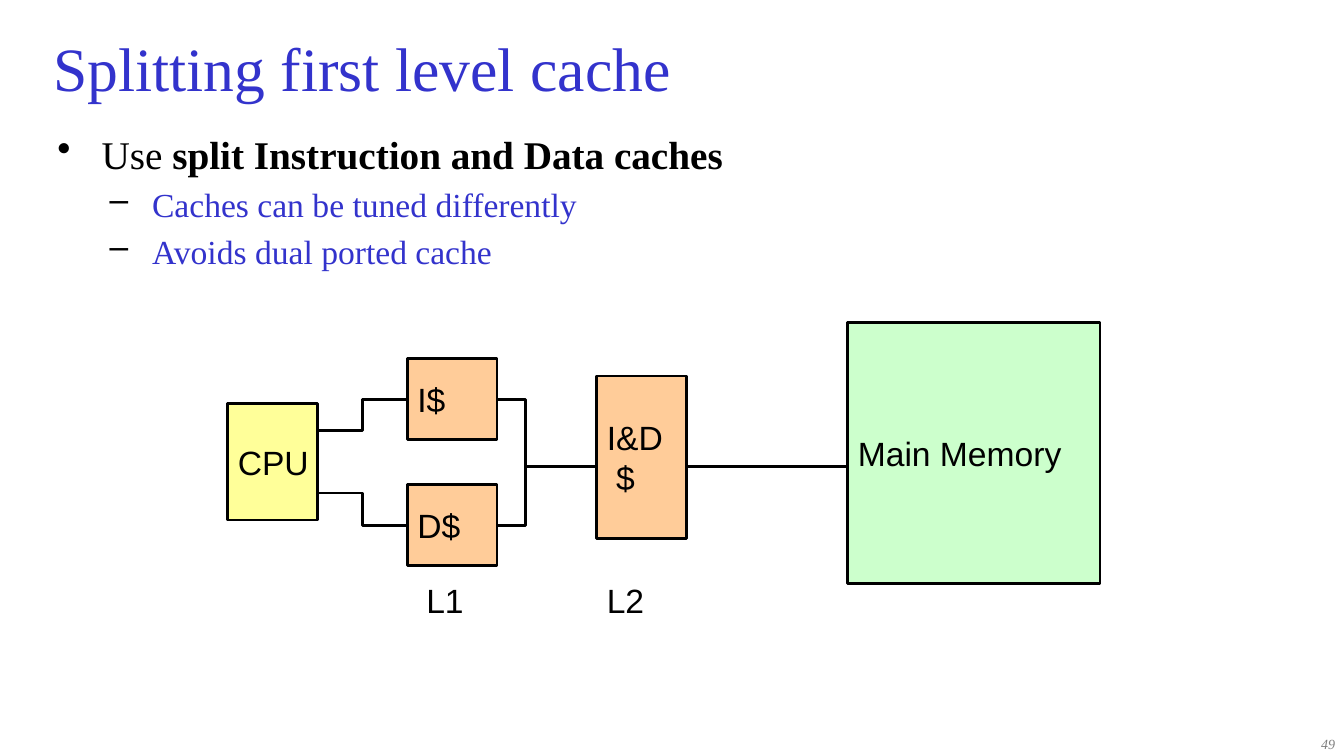
from pptx import Presentation, util as u
from pptx.dml import color
from pptx.enum import shapes, text
from pptx.oxml import ns
from lxml import etree

SCALE = 9144
SERIF, SANS = "Times New Roman", "Arial"
BLACK, BLUE, GREY = "000000", "3333CC", "7F7F7F"
LABEL = {"name": SANS, "size": u.Pt(24), "color": BLACK}


def px(*vals):
    """Turn lengths in px into EMU."""
    return [u.Emu(v * SCALE) for v in vals]


def rgb(code):
    """Make a colour from a hex string."""
    return color.RGBColor.from_string(code)


def put(obj, vals):
    """Set attributes from a dict."""
    for key, val in vals.items():
        setattr(obj, key, val)


def sub(node, tag, **attrs):
    """Append a DrawingML element."""
    return etree.SubElement(node, ns.qn("a:" + tag), attrs)


def write(para, words, font):
    """Add a run with the given font values."""
    run = para.add_run()
    run.text = words
    put(run.font, {k: v for k, v in font.items() if k != "color"})
    run.font.color.rgb = rgb(font["color"])


def inset(frame, side, top):
    """Set the inner margins of a text frame."""
    put(frame, dict(zip(("margin_left", "margin_right", "margin_top", "margin_bottom"),
                        px(side, side, top, top))))


def head(slide, box):
    """Place and format the title."""
    title = slide.shapes.title
    put(title, dict(zip(("left", "top", "width", "height"), px(*box))))
    frame = title.text_frame
    inset(frame, 10, 10)
    put(frame, {"vertical_anchor": text.MSO_ANCHOR.MIDDLE, "word_wrap": True,
                "auto_size": text.MSO_AUTO_SIZE.NONE})
    para = frame.paragraphs[0]
    para.alignment = text.PP_ALIGN.LEFT
    write(para, "Splitting first level cache", {"name": SERIF, "size": u.Pt(44), "color": BLUE})


def points(slide, box):
    """Place the bulleted list."""
    frame = slide.shapes.add_textbox(*px(*box)).text_frame
    frame.word_wrap = True
    inset(frame, 10, 10)
    main = {"name": SERIF, "size": u.Pt(28), "color": BLACK}
    minor = {"name": SERIF, "size": u.Pt(24), "color": BLUE}
    rows = [
        (0, [("Use ", main), ("split Instruction and Data caches", {**main, "bold": True})]),
        (1, [("Caches can be tuned differently", minor)]),
        (1, [("Avoids dual ported cache", minor)]),
    ]
    looks = [(50, -44, 5.6, "•"), (100, -42, 4.8, "–")]
    for i, (level, runs) in enumerate(rows):
        para = frame.add_paragraph() if i else frame.paragraphs[0]
        left, hang, gap, mark = looks[level]
        put(para, {"level": level, "space_before": u.Pt(gap)})
        props = para._p.get_or_add_pPr()
        props.set("marL", str(left * SCALE))
        props.set("indent", str(hang * SCALE))
        sub(sub(props, "buClr"), "srgbClr", val=BLACK)
        sub(props, "buChar", char=mark)
        for words, font in runs:
            write(para, words, font)


def block(slide, box, fill, *lines):
    """Draw one labelled part of the memory system."""
    shape = slide.shapes.add_shape(shapes.MSO_SHAPE.RECTANGLE, *px(*box))
    shape.shadow.inherit = False
    shape.fill.solid()
    shape.fill.fore_color.rgb = rgb(fill)
    shape.line.color.rgb = rgb(BLACK)
    shape.line.width = u.Pt(2)
    frame = shape.text_frame
    put(frame, {"word_wrap": False, "vertical_anchor": text.MSO_ANCHOR.MIDDLE})
    for i, words in enumerate(lines):
        para = frame.add_paragraph() if i else frame.paragraphs[0]
        para.alignment = text.PP_ALIGN.LEFT
        write(para, words, LABEL)


def wire(slide, ends, bend=None):
    """Draw a straight wire, or an elbow that turns at a share of its width."""
    kind = shapes.MSO_CONNECTOR.STRAIGHT if bend is None else shapes.MSO_CONNECTOR.ELBOW
    line = slide.shapes.add_connector(kind, *px(*ends))
    line.line.color.rgb = rgb(BLACK)
    line.line.width = u.Pt(2)
    props = line._element.spPr
    sub(props, "effectLst")
    if bend is not None:
        guides = props.find(ns.qn("a:prstGeom")).get_or_add_avLst()
        sub(guides, "gd", name="adj1", fmla=f"val {int(bend * 100000)}")


def note(slide, box, words):
    """Place the name of a cache level."""
    frame = slide.shapes.add_textbox(*px(*box)).text_frame
    put(frame, {"word_wrap": False, "auto_size": text.MSO_AUTO_SIZE.SHAPE_TO_FIT_TEXT})
    write(frame.paragraphs[0], words, LABEL)


def chart(slide, box):
    """Draw the cache diagram from the corner of its box."""
    x, y, wide, high = box
    side, cell = 89, 80
    first, second, store = x + 178, x + 366, x + 615
    upper, lower = y + 36, y + 161
    block(slide, (x, y + 80, side, 116), "FFFF99", "CPU")
    block(slide, (first, upper, side, cell), "FFCC99", "I$")
    block(slide, (first, lower, side, cell), "FFCC99", "D$")
    block(slide, (second, y + 53, side, 161), "FFCC99", "I&D", " $")
    block(slide, (store, y, wide - 615, high), "CCFFCC", "Main Memory")
    top, low = upper + cell // 2, lower + cell // 2
    wire(slide, (x + side, y + 169, first, low), 0.5)
    wire(slide, (x + side, y + 107, first, top), 0.5)
    out = first + side
    wire(slide, (out, top, out + 1, low), 29)
    mid = y + 143
    wire(slide, (out + 27, mid, second, mid))
    wire(slide, (second + side, mid, store, mid))
    for left, words in ((first + 9, "L1"), (second, "L2")):
        note(slide, (left, y + 250, 58, 50), words)


def foot(slide, box):
    """Place the page number."""
    frame = slide.shapes.add_textbox(*px(*box)).text_frame
    frame.word_wrap = True
    inset(frame, 10, 5)
    para = frame.paragraphs[0]
    para.alignment = text.PP_ALIGN.RIGHT
    write(para, "49", {"name": SERIF, "size": u.Pt(10), "italic": True, "color": GREY})


def main():
    """Build the slide and save it."""
    deck = Presentation()
    put(deck, dict(zip(("slide_width", "slide_height"), px(1333, 750))))
    slide = deck.slides.add_slide(deck.slide_layouts[5])
    head(slide, (43, 25, 1265, 83))
    points(slide, (41, 119, 1265, 602))
    chart(slide, (226, 320, 865, 259))
    foot(slide, (1056, 725, 278, 25))
    deck.save("out.pptx")


if __name__ == "__main__":
    main()
